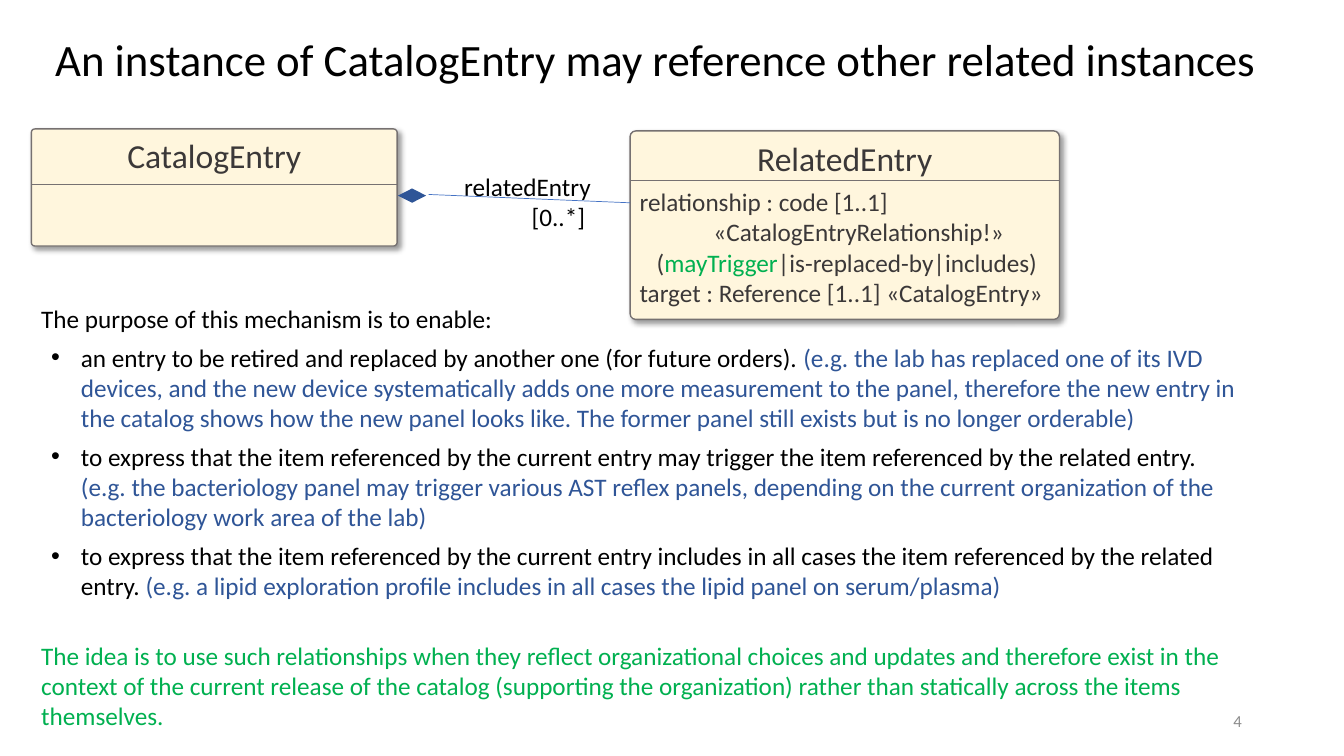
import pptx
import pptx.dml.color
import pptx.enum.shapes
import pptx.enum.text
import pptx.oxml
import pptx.oxml.ns
import pptx.util
from pptx.util import Cm

BLACK, GRAY, GREEN, BLUE = "000000", "3B3838", "00B050", "2F5597"
SHAPES = pptx.enum.shapes.MSO_SHAPE
ALIGN = pptx.enum.text.PP_ALIGN
MIDDLE = pptx.enum.text.MSO_ANCHOR.MIDDLE
NAMESPACE = pptx.oxml.ns.nsdecls("a")
SHADOW = (f'<a:outerShdw {NAMESPACE} blurRad="50800" dist="38100" dir="2700000" algn="tl" rotWithShape="0">'
          '<a:srgbClr val="000000"><a:alpha val="40000"/></a:srgbClr></a:outerShdw>')


def color(value):
    return pptx.dml.color.RGBColor.from_string(value)


def write(frame, runs, size=18, align=ALIGN.LEFT, after=0, before=0, margin=0, hanging=0):
    """Fill the first empty paragraph, or add one, with (text, colour) runs; hanging > 0 gives a bullet."""
    paragraph = frame.paragraphs[0]
    if paragraph.runs:
        paragraph = frame.add_paragraph()
    paragraph.alignment = align
    paragraph.space_after = pptx.util.Pt(after)
    paragraph.space_before = pptx.util.Pt(before)
    properties = paragraph._p.get_or_add_pPr()
    properties.set("marL", str(Cm(margin)))
    properties.set("indent", str(-Cm(hanging)))
    if hanging:
        properties.append(pptx.oxml.parse_xml(f'<a:buFont {NAMESPACE} typeface="Arial"/>'))
        properties.append(pptx.oxml.parse_xml(f'<a:buChar {NAMESPACE} char="•"/>'))
    for text, run_color in runs:
        run = paragraph.add_run()
        run.text = text
        run.font.name = "Calibri"
        run.font.size = pptx.util.Pt(size)
        run.font.color.rgb = color(run_color)
    return paragraph


presentation = pptx.Presentation()
presentation.slide_width, presentation.slide_height = Cm(33.87), Cm(19.05)
slide = presentation.slides.add_slide(presentation.slide_layouts[6])

# Text boxes
boxes = {
    "title": (1.14, 0.43, 31.17, 2.26),
    "role": (11.23, 4.19, 3.91, 1.8),
    "purpose": (0.79, 7.52, 30.73, 11.13),
    "number": (23.93, 17.65, 7.62, 1.02),
}
frames = {}
for name, box in boxes.items():
    frames[name] = slide.shapes.add_textbox(*map(Cm, box)).text_frame
    frames[name].word_wrap = True

frames["title"].vertical_anchor = frames["number"].vertical_anchor = MIDDLE
title = write(frames["title"], [("An instance of CatalogEntry may reference other related instances", BLACK)], 32)
title.line_spacing = 0.9
for text in ("relatedEntry", "[0..*] "):
    write(frames["role"], [(text, BLACK)], align=ALIGN.RIGHT)
write(frames["number"], [("4", "8C8C8C")], 12, ALIGN.RIGHT)

purposes = [
    ("an entry to be retired and replaced by another one (for future orders). ",
     "(e.g. the lab has replaced one of its IVD devices, and the new device systematically adds one more "
     "measurement to the panel, therefore the new entry in the catalog shows how the new panel looks like. "
     "The former panel still exists but is no longer orderable)"),
    ("to express that the item referenced by the current entry may trigger the item referenced by the "
     "related entry. ",
     "(e.g. the bacteriology panel may trigger various AST reflex panels, depending on the current "
     "organization of the bacteriology work area of the lab)"),
    ("to express that the item referenced by the current entry includes in all cases the item referenced "
     "by the related entry. ",
     "(e.g. a lipid exploration profile includes in all cases the lipid panel on serum/plasma)"),
]
write(frames["purpose"], [("The purpose of this mechanism is to enable:", BLACK)], after=6)
for purpose, example in purposes:
    write(frames["purpose"], [(purpose, BLACK), (example, BLUE)], after=6, margin=1, hanging=0.75)
write(frames["purpose"], [
    ("The idea is to use such relationships when they reflect organizational choices and updates and "
     "therefore exist in the context of the current release of the catalog (supporting the organization) "
     "rather than statically across the items themselves.", GREEN)], before=22)

# Class cards: name, box, height of the title row, attributes as (runs, margin)
cards = [
    ("CatalogEntry", (0.79, 3.25, 9.22, 2.95), 1.4, []),
    ("RelatedEntry", (15.88, 3.3, 10.82, 4.75), 1.25, [
        ([("relationship : code [1..1]", GRAY)], 0),
        ([("«CatalogEntryRelationship!»", GRAY)], 1.86),
        ([("(", GRAY), ("mayTrigger", GREEN), ("|is-replaced-by|includes)", GRAY)], 0.43),
        ([("target : Reference [1..1] «CatalogEntry»", GRAY)], 0),
    ]),
]
lines = [((10.8, 4.9), (15.88, 5.11), "4472C4")]
for name, box, title_height, attributes in cards:
    card = slide.shapes.add_shape(SHAPES.ROUNDED_RECTANGLE, *map(Cm, box))
    card.adjustments[0] = 0.03
    card.fill.solid()
    card.fill.fore_color.rgb = color("FFF6DD")
    card.line.color.rgb = color("767171")
    card.line.width = pptx.util.Pt(1)
    card.shadow.inherit = False
    card._element.spPr.find(pptx.oxml.ns.qn("a:effectLst")).append(pptx.oxml.parse_xml(SHADOW))
    frame = card.text_frame
    frame.word_wrap = True
    frame.vertical_anchor = pptx.enum.text.MSO_ANCHOR.TOP
    frame.margin_left = frame.margin_right = Cm(0.2)
    frame.margin_top = frame.margin_bottom = Cm(0.13)
    write(frame, [(name, GRAY)], 24, ALIGN.CENTER, after=6)
    for runs, margin in attributes:
        write(frame, runs, margin=margin)
    left, top, width, height = box
    divider_y = top + title_height
    lines.append(((left, divider_y), (left + width, divider_y), "767171"))

# Composition diamond, association and card dividers
diamond = slide.shapes.add_shape(SHAPES.FLOWCHART_DECISION, Cm(10.03), Cm(4.75), Cm(0.71), Cm(0.36))
diamond.fill.solid()
diamond.fill.fore_color.rgb = color(BLUE)
diamond.line.fill.background()
diamond.shadow.inherit = False

for start, end, line_color in lines:
    connector = slide.shapes.add_connector(
        pptx.enum.shapes.MSO_CONNECTOR.STRAIGHT, *map(Cm, start + end))
    connector.line.color.rgb = color(line_color)
    connector.line.width = pptx.util.Pt(0.5)
    connector._element.spPr.append(pptx.oxml.parse_xml(f"<a:effectLst {NAMESPACE}/>"))

presentation.save("out.pptx")
